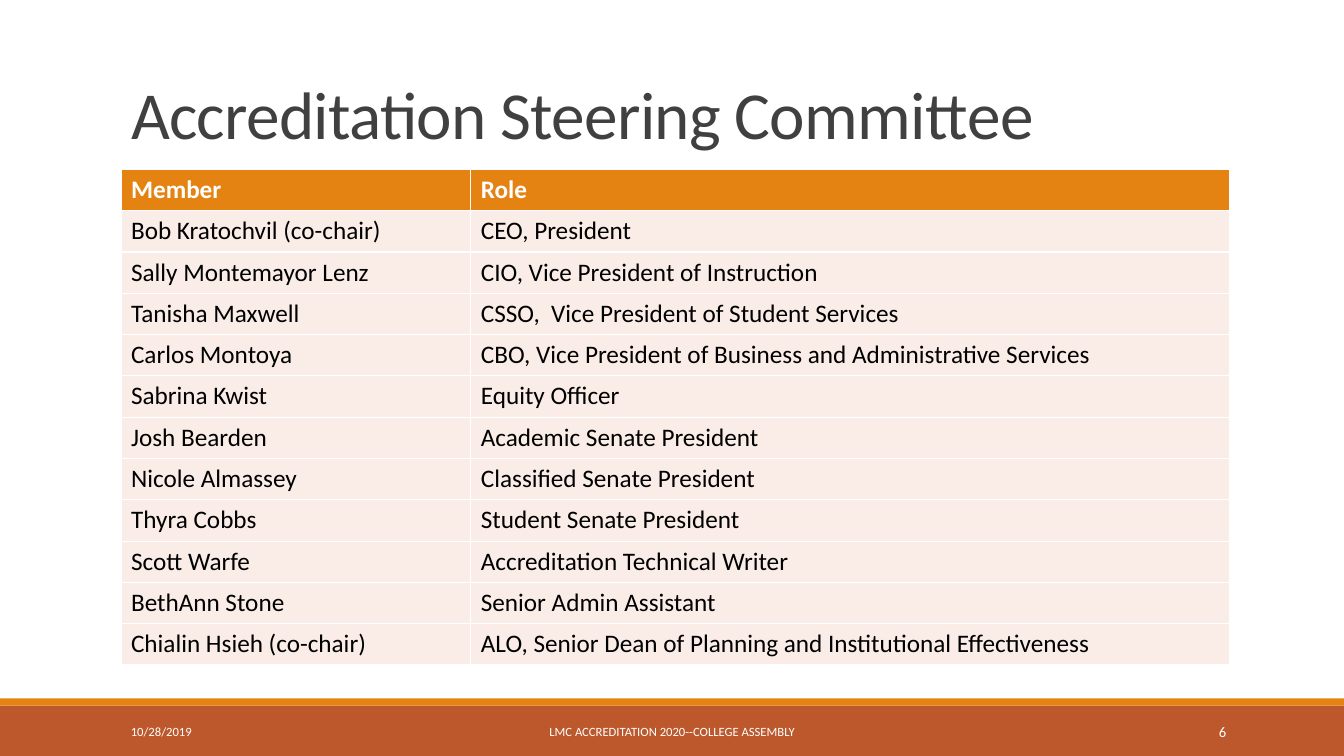
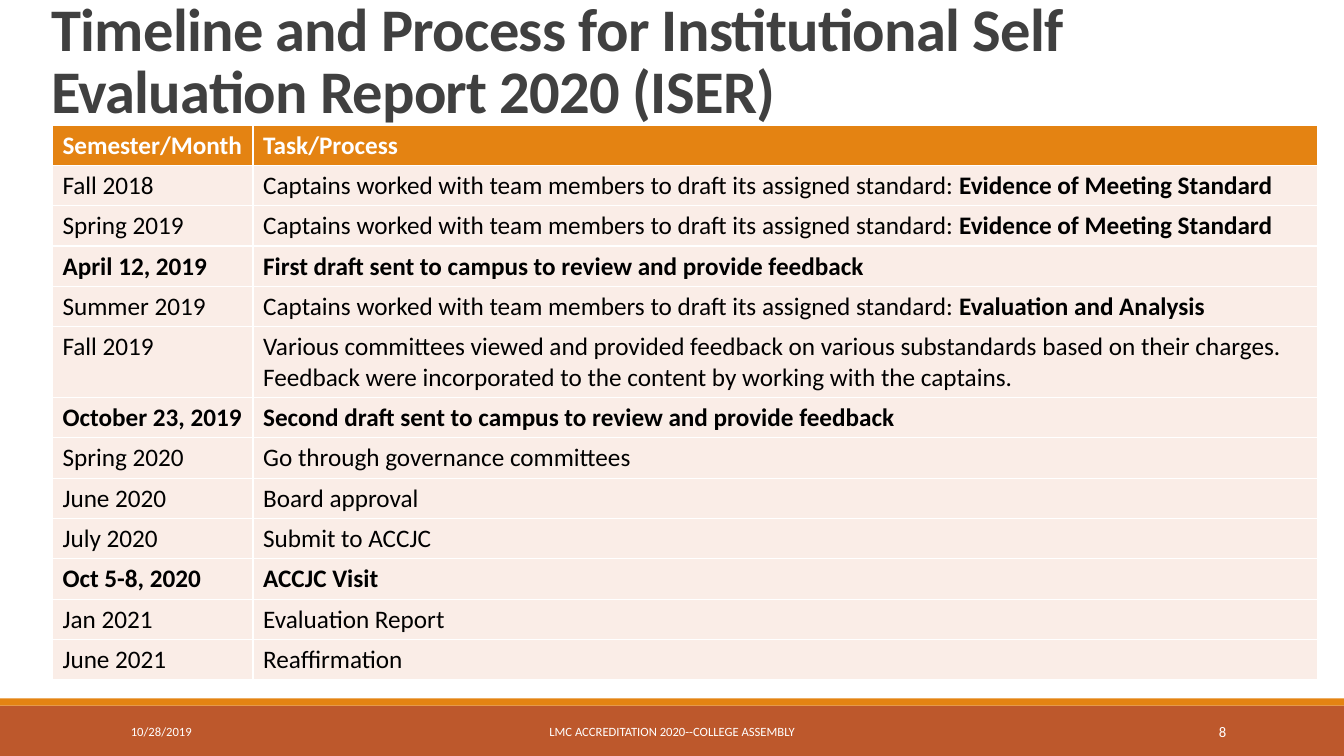
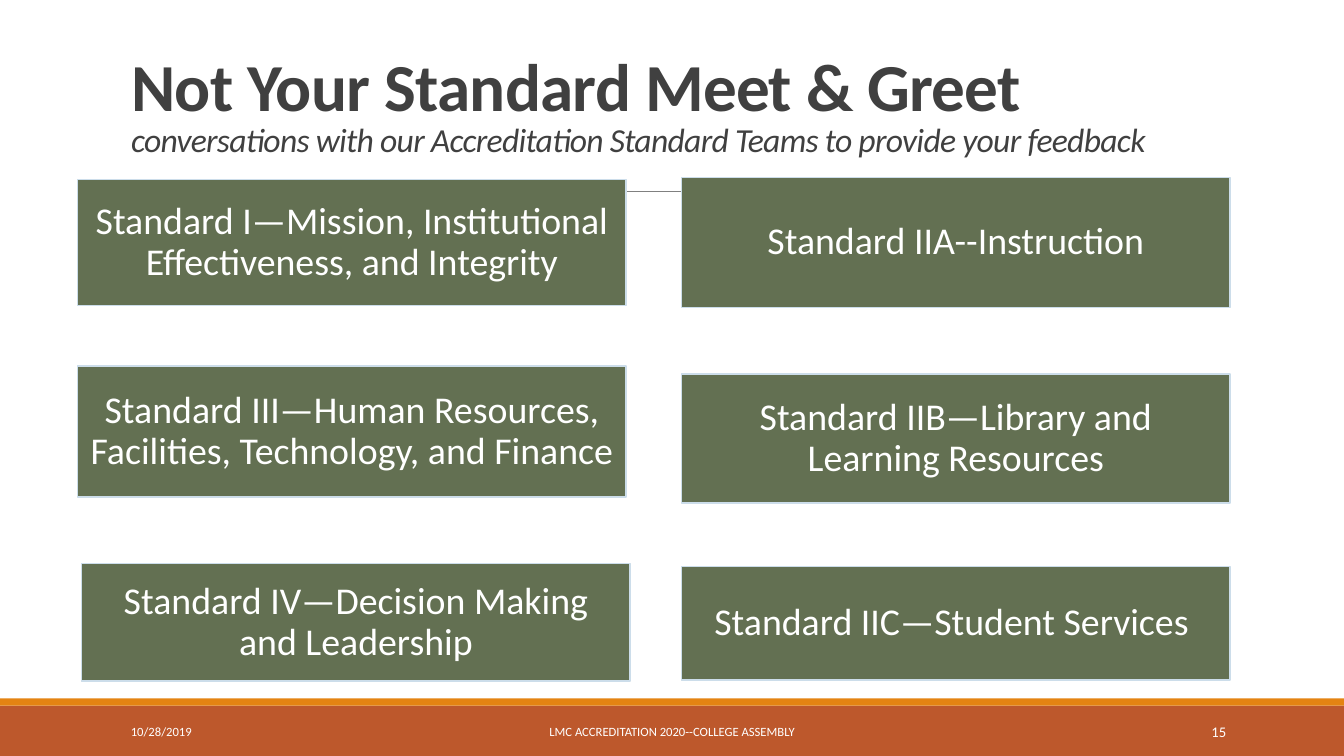
from pptx import Presentation
from pptx.dml.color import RGBColor
from pptx.enum.shapes import MSO_CONNECTOR, MSO_SHAPE
from pptx.enum.text import MSO_ANCHOR, MSO_AUTO_SIZE, PP_ALIGN
from pptx.oxml.ns import qn
from pptx.util import Inches, Pt

LEFT, CENTER, RIGHT = PP_ALIGN.LEFT, PP_ALIGN.CENTER, PP_ALIGN.RIGHT
MIDDLE, BOTTOM = MSO_ANCHOR.MIDDLE, MSO_ANCHOR.BOTTOM
NO_AUTOFIT = MSO_AUTO_SIZE.NONE
RECTANGLE = MSO_SHAPE.RECTANGLE
STRAIGHT = MSO_CONNECTOR.STRAIGHT
TITLE_ONLY = 5

FONT = "Calibri"
ORANGE, RUST, BLUSH, OLIVE = "E48312", "BD582C", "FAEDE7", "637052"
WHITE, BLACK, CHARCOAL, GRAY, PALE_BLUE = "FFFFFF", "000000", "404040", "808080", "CCDDEA"
DATE = "10/28/2019"
FOOTER = "LMC ACCREDITATION 2020--COLLEGE ASSEMBLY"

MEMBERS = [
    ("Member", "Role"),
    ("Bob Kratochvil (co-chair)", "CEO, President"),
    ("Sally Montemayor Lenz", "CIO, Vice President of Instruction"),
    ("Tanisha Maxwell", "CSSO,  Vice President of Student Services"),
    ("Carlos Montoya", "CBO, Vice President of Business and Administrative Services"),
    ("Sabrina Kwist", "Equity Officer"),
    ("Josh Bearden", "Academic Senate President"),
    ("Nicole Almassey", "Classified Senate President"),
    ("Thyra Cobbs", "Student Senate President"),
    ("Scott Warfe", "Accreditation Technical Writer"),
    ("BethAnn Stone", "Senior Admin Assistant"),
    ("Chialin Hsieh (co-chair)", "ALO, Senior Dean of Planning and Institutional Effectiveness"),
]

DRAFTING = "Captains worked with team members to draft its assigned standard: "
BOLD = {"bold": True}
EVIDENCE = [(DRAFTING, {}), ("Evidence of Meeting Standard", BOLD)]
TIMELINE = [
    ("Semester/Month", "Task/Process"),
    ("Fall 2018", EVIDENCE),
    ("Spring 2019", EVIDENCE),
    ("April 12, 2019", "First draft sent to campus to review and provide feedback"),
    ("Summer 2019", [(DRAFTING, {}), ("Evaluation and Analysis", BOLD)]),
    ("Fall 2019", "Various committees viewed and provided feedback on various substandards based on "
                  "their charges. Feedback were incorporated to the content by working with the captains."),
    ("October 23, 2019", "Second draft sent to campus to review and provide feedback"),
    ("Spring 2020", "Go through governance committees"),
    ("June 2020", "Board approval"),
    ("July 2020", "Submit to ACCJC"),
    ("Oct 5-8, 2020", "ACCJC Visit"),
    ("Jan 2021", "Evaluation Report"),
    ("June 2021", "Reaffirmation"),
]
MILESTONES = (3, 6, 10)

STANDARDS = [
    ("Standard I—Mission, Institutional Effectiveness, and Integrity", 0.77, 1.78, 1.25),
    ("Standard IIA--Instruction", 6.76, 1.76, 1.29),
    ("Standard IIB—Library and Learning Resources", 6.76, 3.71, 1.28),
    ("Standard IIC—Student Services ", 6.76, 5.62, 1.13),
    ("Standard III—Human Resources, Facilities, Technology, and Finance", 0.77, 3.63, 1.3),
    ("Standard IV—Decision Making and Leadership", 0.81, 5.59, 1.17),
]


def color(hex_text):
    """Turn a hex string into a colour."""
    return RGBColor.from_string(hex_text)


def write(paragraph, content, size=18, fill=BLACK, bold=False, italic=False,
          align=LEFT, line_spacing=None, tracking=None):
    """Write a string or a list of (text, changes) runs; a None text breaks the line."""
    paragraph.alignment = align
    if line_spacing:
        paragraph.line_spacing = line_spacing
    for text, changes in [(content, {})] if isinstance(content, str) else content:
        if text is None:
            paragraph.add_line_break()
            continue
        run = paragraph.add_run()
        run.text = text
        run.font.name = FONT
        run.font.size = Pt(changes.get("size", size))
        run.font.bold = changes.get("bold", bold)
        run.font.italic = changes.get("italic", italic)
        run.font.color.rgb = color(fill)
        if tracking:
            run._r.get_or_add_rPr().set("spc", str(round(tracking * 100)))


class Deck:
    """Hold the shared style and the current slide."""

    def __init__(self):
        """Start a wide presentation."""
        self.presentation = Presentation()
        self.presentation.slide_width = Inches(13.33)
        self.presentation.slide_height = Inches(7.5)
        self.slide = None

    def add_slide(self, number, title, box, **title_format):
        """Add a slide with its title, bands, rule and footer."""
        layout = self.presentation.slide_layouts[TITLE_ONLY]
        self.slide = self.presentation.slides.add_slide(layout)
        self.rectangle(0, 7, 13.33, 0.5, RUST)
        self.rectangle(0, 6.93, 13.33, 0.07, ORANGE)
        self.rule(1.31, 12.21, 1.9)
        self.title(title, box, **title_format)
        self.text(DATE, 1.2, 2.7, size=9)
        self.text(FOOTER, 4.03, 5.27, size=9, align=CENTER)
        self.text(str(number), 10.83, 1.43, size=10.5, align=RIGHT)

    def title(self, content, box, **title_format):
        """Place and format the title placeholder."""
        shape = self.slide.shapes.title
        shape.left, shape.top, shape.width, shape.height = map(Inches, box)
        frame = shape.text_frame
        frame.auto_size = NO_AUTOFIT
        frame.word_wrap = True
        frame.vertical_anchor = BOTTOM
        write(frame.paragraphs[0], content, fill=CHARCOAL, line_spacing=0.85,
              tracking=-0.5, **title_format)

    def rectangle(self, left, top, width, height, fill, outline=None):
        """Draw a filled rectangle."""
        shape = self.slide.shapes.add_shape(
            RECTANGLE, Inches(left), Inches(top), Inches(width), Inches(height))
        shape.shadow.inherit = False
        shape.fill.solid()
        shape.fill.fore_color.rgb = color(fill)
        if outline:
            shape.line.color.rgb = color(outline)
            shape.line.width = Pt(1.25)
        else:
            shape.line.fill.background()
        return shape

    def rule(self, start, end, top):
        """Draw a thin horizontal line."""
        connector = self.slide.shapes.add_connector(
            STRAIGHT, Inches(start), Inches(top), Inches(end), Inches(top))
        connector.line.color.rgb = color(GRAY)
        connector.line.width = Pt(0.5)
        properties = connector._element.spPr
        properties.append(properties.makeelement(qn("a:effectLst"), {}))

    def text(self, content, left, width, **text_format):
        """Add a white text box on the footer band."""
        box = self.slide.shapes.add_textbox(
            Inches(left), Inches(7.06), Inches(width), Inches(0.4))
        box.text_frame.word_wrap = True
        box.text_frame.vertical_anchor = MIDDLE
        write(box.text_frame.paragraphs[0], content, fill=WHITE, **text_format)

    def card(self, content, left, top, height):
        """Add an olive card with centred text."""
        frame = self.rectangle(left, top, 5.44, height, OLIVE, PALE_BLUE).text_frame
        frame.word_wrap = True
        frame.vertical_anchor = MIDDLE
        frame.margin_left = frame.margin_right = Inches(0.11)
        frame.margin_top = frame.margin_bottom = Inches(0.11)
        write(frame.paragraphs[0], content, size=27, fill=WHITE, align=CENTER, line_spacing=0.9)

    def table(self, rows, left, top, widths, row_height, tall_rows=None, bold_rows=()):
        """Add a table with an orange header and blush body."""
        heights = [(tall_rows or {}).get(index, row_height) for index in range(len(rows))]
        table = self.slide.shapes.add_table(
            len(rows), len(widths), Inches(left), Inches(top),
            Inches(sum(widths)), Inches(sum(heights))).table
        table.horz_banding = False
        for column, width in zip(table.columns, widths):
            column.width = Inches(width)
        for index, values in enumerate(rows):
            table.rows[index].height = Inches(heights[index])
            header = index == 0
            for cell, content in zip(table.rows[index].cells, values):
                cell.fill.solid()
                cell.fill.fore_color.rgb = color(ORANGE if header else BLUSH)
                write(cell.text_frame.paragraphs[0], content,
                      fill=WHITE if header else BLACK, bold=header or index in bold_rows)


def main():
    """Build the three slides."""
    deck = Deck()

    deck.add_slide(6, "Accreditation Steering Committee", (1.2, 0.31, 11, 1.26), size=48)
    deck.table(MEMBERS, 1.2, 1.68, (3.47, 7.53), 0.41)

    deck.add_slide(8, "Timeline and Process for Institutional Self Evaluation Report 2020 (ISER)",
                   (0.41, 0.17, 11.85, 1.13), size=43.2, bold=True)
    deck.table(TIMELINE, 0.52, 1.24, (1.99, 10.56), 0.39,
               tall_rows={5: 0.68}, bold_rows=MILESTONES)

    subtitle = "conversations with our Accreditation Standard Teams to provide your feedback"
    deck.add_slide(15, [("Not Your Standard Meet & Greet", BOLD), (None, {}),
                        (subtitle, {"size": 24, "italic": True})],
                   (1.2, 0.31, 11, 1.32), size=48)
    for standard in STANDARDS:
        deck.card(*standard)

    deck.presentation.save("out.pptx")


if __name__ == "__main__":
    main()
